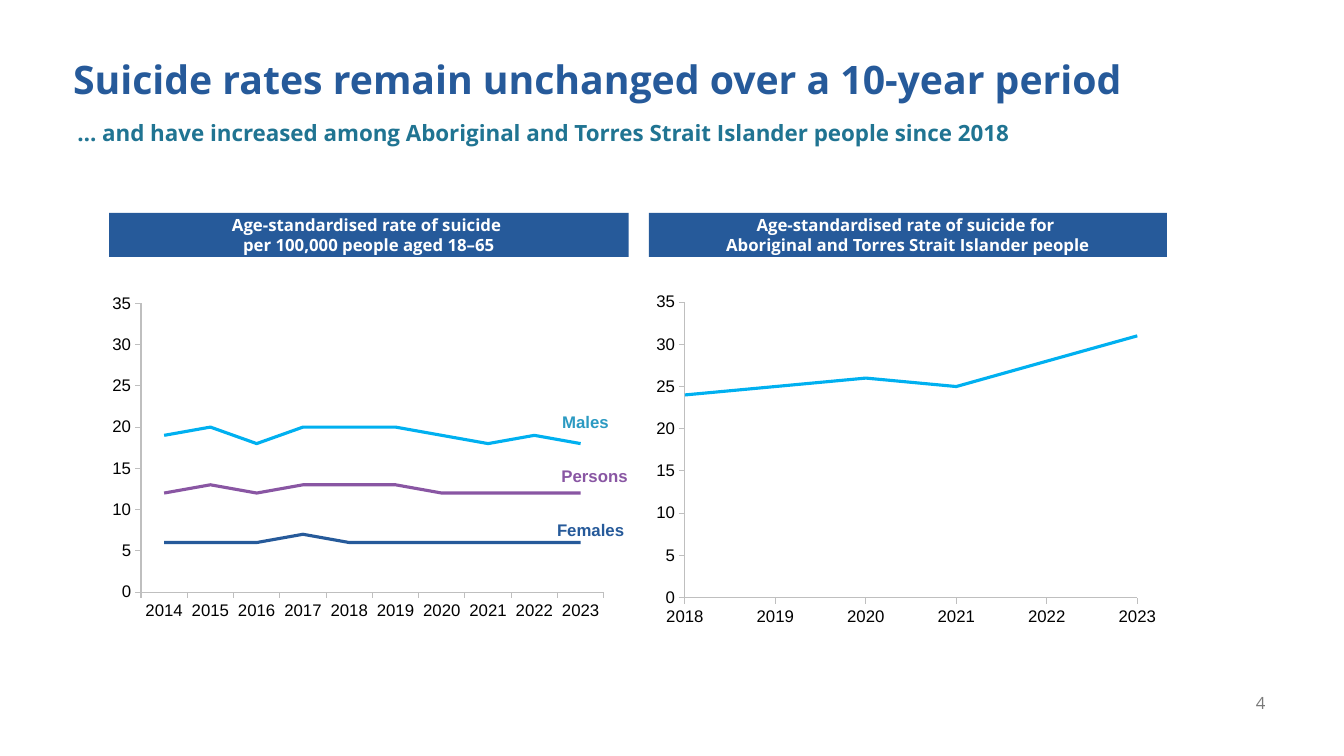
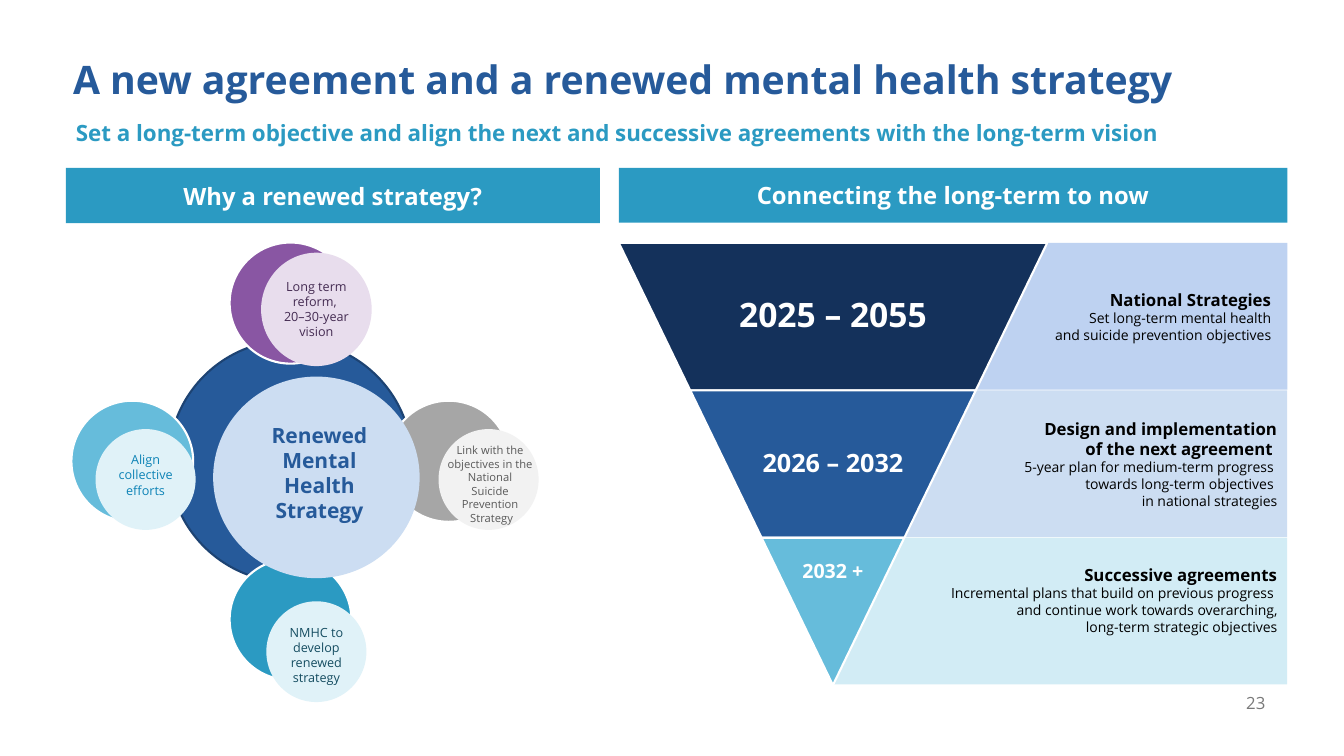
from dataclasses import dataclass

from pptx import Presentation
from pptx.chart.data import CategoryChartData, XyChartData
from pptx.dml.color import RGBColor
from pptx.enum.chart import XL_CHART_TYPE, XL_TICK_MARK
from pptx.enum.shapes import MSO_SHAPE
from pptx.enum.text import MSO_ANCHOR, MSO_AUTO_SIZE, PP_ALIGN
from pptx.oxml import parse_xml
from pptx.oxml.ns import nsdecls
from pptx.util import Pt


@dataclass(frozen=True)
class Theme:
    font: str = "Open Sans"
    chart_font: str = "Arial"
    blue: str = "265A9A"
    navy: str = "14315B"
    rim: str = "1D4373"
    teal: str = "2B9AC2"
    deep_teal: str = "207492"
    sky: str = "66BCDB"
    cyan: str = "00B0F0"
    purple: str = "8956A3"
    grey: str = "A6A6A6"
    axis: str = "BFBFBF"
    number: str = "797979"
    pale_blue: str = "CCDDF2"
    pale_sky: str = "E0F2F8"
    white: str = "FFFFFF"
    black: str = "000000"
    title: int = 28
    subtitle: int = 16
    banner: int = 17
    label: int = 12
    detail: int = 10
    small: int = 9
    tiny: int = 8


T = Theme()
INSETS = (7.2, 3.6, 7.2, 3.6)

# Slide 4: suicide rates
RATES = {
    "number": "4",
    "title": "Suicide rates remain unchanged over a 10-year period",
    "subtitle": "… and have increased among Aboriginal and Torres Strait Islander people since 2018",
}
RATE_HEADINGS = [
    (78, 371, ["Age-standardised rate of suicide ", "per 100,000 people aged 18–65"]),
    (463.5, 370, ["Age-standardised rate of suicide for ",
                  "Aboriginal and Torres Strait Islander people"]),
]
YEARS = [str(year) for year in range(2014, 2024)]
RATE_SERIES = [
    ("Males", T.cyan, [19, 20, 18, 20, 20, 20, 19, 18, 19, 18]),
    ("Females", T.blue, [6, 6, 6, 7, 6, 6, 6, 6, 6, 6]),
    ("Persons", T.purple, [12, 13, 12, 13, 13, 13, 12, 12, 12, 12]),
]
# name, colour, right edge, top
SERIES_LABELS = [("Males", T.teal, 442, 290.5), ("Persons", T.purple, 455.5, 329),
                 ("Females", T.blue, 453, 367.5)]
INDIGENOUS_RATES = [(2023, 31), (2022, 28), (2021, 25),
                    (2020, 26), (2019, 25), (2018, 24)]

# Slide 23: renewed strategy
STRATEGY = {
    "number": "23",
    "title": "A new agreement and a renewed mental health strategy",
    "subtitle": "Set a long-term objective and align the next and successive agreements "
                "with the long-term vision",
}
STRATEGY_HEADINGS = [(47, 381.5, 39.5, "Why a renewed strategy?"),
                     (442, 477.5, 39, "Connecting the long-term to now")]
HUB = "Renewed Mental Health Strategy"
# direction from hub, back colour, front colour, text colour, front offset, front size,
# type size, insets, anchor, wrap, lines
SATELLITES = [
    ((0, -1), T.purple, "E8DDED", "442B52", (18.5, 4.5), (79, 81), T.small,
     (0, 3, 0, 3.6), MSO_ANCHOR.MIDDLE, True, ["Long term reform, ", "20–30-year vision"]),
    ((1, 0), T.grey, "F2F2F2", "595959", (28.5, 13), (71.5, 72), T.tiny,
     (11.5, 0, 7.2, 3.6), MSO_ANCHOR.TOP, False,
     ["Link with the ", "objectives in the ", "National ", "Suicide ", "Prevention ",
      "Strategy"]),
    ((0, 1), T.teal, T.pale_sky, "154D61", (18.5, 23), (71.5, 72), T.small,
     (3, 6, 3, 3.6), MSO_ANCHOR.TOP, True, ["NMHC to develop renewed strategy"]),
    ((-1, 0), T.sky, T.pale_sky, "0D83B6", (9.5, 13), (71.5, 72), T.small,
     (3, 6, 3, 3.6), MSO_ANCHOR.TOP, True, ["Align collective efforts"]),
]
# period, type size, tier colour, panel colour, panel insets, headings, details
TIERS = [
    ("2025 – 2055", 24, T.navy, "BED2F1", (7.2, 3.6, 11.5, 3.6),
     ["National Strategies"],
     ["Set long-term mental health", "and suicide prevention objectives"]),
    ("2026 – 2032", 18, T.blue, T.pale_blue, INSETS,
     ["Design and implementation", "of the next agreement "],
     ["5-year plan for medium-term progress ", "towards long-term objectives ",
      "in national strategies"]),
    ("2032 +", 14, T.sky, "D2ECF5", (7.2, 3.6, 7.2, 19.5),
     ["Successive agreements"],
     ["Incremental plans that build on previous progress ",
      "and continue work towards overarching,", "long-term strategic objectives"]),
]


def rgb(value):
    return RGBColor.from_string(value)


def style_font(font, size, color, bold=False, name=T.font):
    font.name, font.size, font.bold = name, Pt(size), bold
    font.color.rgb = rgb(color)


def write(frame, lines, size, color, bold=False, align=PP_ALIGN.CENTER,
          anchor=MSO_ANCHOR.MIDDLE, insets=INSETS, wrap=True, font=T.font, spacing=None):
    """Fill a frame, one paragraph a line."""
    frame.text = "\n".join(lines)
    frame.word_wrap = wrap
    frame.auto_size = MSO_AUTO_SIZE.NONE
    frame.vertical_anchor = anchor
    (frame.margin_left, frame.margin_top,
     frame.margin_right, frame.margin_bottom) = map(Pt, insets)
    for paragraph in frame.paragraphs:
        paragraph.alignment = align
        paragraph.space_before = Pt(0)
        if spacing:
            paragraph.line_spacing = spacing
        for run in paragraph.runs:
            style_font(run.font, size, color, bold, font)


def paint(shape, fill, line=None):
    shape.shadow.inherit = False
    shape.fill.solid()
    shape.fill.fore_color.rgb = rgb(fill)
    if line:
        shape.line.color.rgb = rgb(line)
        shape.line.width = Pt(1.5)
    else:
        shape.line.fill.background()
    return shape


def add_box(slide, left, top, width, height, fill):
    return paint(slide.shapes.add_shape(
        MSO_SHAPE.RECTANGLE, Pt(left), Pt(top), Pt(width), Pt(height)), fill)


def add_circle(slide, center, size, fill, line=None):
    (x, y), (width, height) = center, size
    return paint(slide.shapes.add_shape(
        MSO_SHAPE.OVAL, Pt(x - width / 2), Pt(y - height / 2), Pt(width), Pt(height)),
        fill, line)


def place(shape, left, top, width, height):
    shape.left, shape.top, shape.width, shape.height = map(Pt, (left, top, width, height))


def add_text(slide, box, *args, **options):
    write(slide.shapes.add_textbox(*map(Pt, box)).text_frame, *args, **options)


def start_slide(deck, content, subtitle_left, subtitle_color):
    """Add a slide with its title, subtitle and page number."""
    slide = deck.slides.add_slide(deck.slide_layouts[0])
    title, subtitle = slide.placeholders
    place(title, 45, 40, 872.5, 40)
    place(subtitle, subtitle_left, 83.5, 872.5, 31.5)
    for holder, key, size, color in ((title, "title", T.title, T.blue),
                                     (subtitle, "subtitle", T.subtitle, subtitle_color)):
        write(holder.text_frame, [content[key]], size, color, bold=True,
              align=PP_ALIGN.LEFT, anchor=MSO_ANCHOR.TOP, spacing=0.9)
    add_text(slide, (856, 487.5, 55, 29), [content["number"]], T.label, T.number,
             align=PP_ALIGN.RIGHT)
    return slide


def add_rate_chart(slide, kind, data, top, left, plot, colors):
    """Add a line chart; plot gives the inner plot area as fractions x, y, w, h."""
    chart = slide.shapes.add_chart(kind, Pt(left), Pt(top), Pt(371.5), Pt(245.5), data).chart
    chart.has_legend = chart.has_title = False
    style_font(chart.font, T.small, T.black, name=T.chart_font)
    for axis in (chart.category_axis, chart.value_axis):
        axis.has_major_gridlines = False
        axis.major_tick_mark = XL_TICK_MARK.OUTSIDE
        axis.minor_tick_mark = XL_TICK_MARK.NONE
        axis.format.line.color.rgb = rgb(T.axis)
        axis.format.line.width = Pt(0.75)
        style_font(axis.tick_labels.font, T.label, T.black, name=T.chart_font)
    rates = chart.value_axis
    rates.minimum_scale, rates.maximum_scale, rates.major_unit = 0, 35, 5
    rates.tick_labels.number_format = "#,##0"
    rates.tick_labels.number_format_is_linked = False
    chart.plots[0].vary_by_categories = False
    for series, color in zip(chart.plots[0].series, colors):
        series.smooth = False
        series.format.line.color.rgb = rgb(color)
        series.format.line.width = Pt(2.25)
    sizes = "".join(f'<c:{tag} val="{value}"/>' for tag, value in zip("xywh", plot))
    layout = parse_xml(
        f'<c:layout {nsdecls("c")}><c:manualLayout><c:layoutTarget val="inner"/>'
        f'<c:xMode val="edge"/><c:yMode val="edge"/>{sizes}</c:manualLayout></c:layout>')
    area = chart.plots[0]._element.getparent()
    for old in area.findall(layout.tag):
        area.remove(old)
    area.insert(0, layout)
    return chart


def build_rates(deck):
    slide = start_slide(deck, RATES, 48, T.deep_teal)
    for left, width, lines in RATE_HEADINGS:
        heading = add_box(slide, left, 152, width, 31.5, T.blue)
        write(heading.text_frame, lines, T.label, T.white, bold=True)

    people = CategoryChartData()
    people.categories = YEARS
    for name, _, values in RATE_SERIES:
        people.add_series(name, values)
    add_rate_chart(slide, XL_CHART_TYPE.LINE, people, 202, 71,
                   (0.08, 0.06, 0.89, 0.84), [color for _, color, _ in RATE_SERIES])
    for name, color, right, top in SERIES_LABELS:
        add_text(slide, (right - 86, top, 86, 22), [name], T.label, color, bold=True,
                 align=PP_ALIGN.RIGHT, anchor=MSO_ANCHOR.TOP, font=T.chart_font)

    indigenous = XyChartData()
    rate = indigenous.add_series("Aboriginal and Torres Strait Islander people")
    for year, value in INDIGENOUS_RATES:
        rate.add_data_point(year, value)
    chart = add_rate_chart(slide, XL_CHART_TYPE.XY_SCATTER_LINES_NO_MARKERS, indigenous,
                           206, 459.5, (0.08, 0.04, 0.87, 0.86), [T.cyan])
    years = chart.category_axis
    years.minimum_scale, years.maximum_scale, years.major_unit = 2018, 2023, 1
    years.tick_labels.number_format = "0"
    years.tick_labels.number_format_is_linked = False


def build_hub(slide, center=(207.5, 329.5), reach=113):
    x, y = center
    add_circle(slide, center, (174, 173), T.blue, T.rim)
    spots = [(x + reach * dx, y + reach * dy) for (dx, dy), *_ in SATELLITES]
    for spot, (_, back, *_) in zip(spots, SATELLITES):
        add_circle(slide, spot, (87, 86.5), back, T.white)
    hub = add_circle(slide, (x + 18.5, y + 11.5), (147.5, 144), T.pale_blue)
    write(hub.text_frame, [HUB], 15, T.blue, bold=True, anchor=MSO_ANCHOR.TOP,
          insets=(11.5, 11.5, 7.2, 3.6))
    for spot, (_, _, front, color, offset, size, type_size,
               insets, anchor, wrap, lines) in zip(spots, SATELLITES):
        circle = add_circle(slide, (spot[0] + offset[0], spot[1] + offset[1]), size, front)
        write(circle.text_frame, lines, type_size, color, anchor=anchor,
              insets=insets, wrap=wrap)


def build_funnel(slide, left=442, top=173.5, width=306, band=105.3, panel_right=919.5):
    step = width / 2 / len(TIERS)
    tops = [top + band * i for i in range(len(TIERS))]
    # Each panel reaches under the slanted edge, down to its tier's lower corner.
    for i, (_, _, _, fill, insets, headings, details) in enumerate(TIERS):
        corner = left + width - step * (i + 1)
        panel = add_box(slide, corner, tops[i], panel_right - corner, band - 0.5, fill)
        write(panel.text_frame, headings + details, T.detail, T.black,
              align=PP_ALIGN.RIGHT, insets=insets)
        for paragraph in panel.text_frame.paragraphs[:len(headings)]:
            style_font(paragraph.runs[0].font, T.label, T.black, bold=True)
    for i, (period, size, fill, *_) in enumerate(TIERS):
        near, far = left + step * i, left + width - step * i
        bottom = tops[i] + band
        outline = slide.shapes.build_freeform(Pt(far), Pt(tops[i]), scale=1.0)
        outline.add_line_segments([(Pt(far - step), Pt(bottom)), (Pt(near + step), Pt(bottom)),
                                   (Pt(near), Pt(tops[i]))], close=True)
        tier = paint(outline.convert_to_shape(), fill, T.white)
        last = i == len(TIERS) - 1
        write(tier.text_frame, [period], size, T.white, bold=True, spacing=0.9,
              anchor=MSO_ANCHOR.TOP if last else MSO_ANCHOR.MIDDLE,
              insets=(3, 17 if last else 3, 3, 3))


def build_strategy(deck):
    slide = start_slide(deck, STRATEGY, 47, T.teal)
    build_hub(slide)
    build_funnel(slide)
    for left, width, height, heading in STRATEGY_HEADINGS:
        banner = add_box(slide, left, 120, width, height, T.teal)
        write(banner.text_frame, [heading], T.banner, T.white, bold=True)


def main():
    deck = Presentation()
    deck.slide_width, deck.slide_height = Pt(960), Pt(540)
    build_rates(deck)
    build_strategy(deck)
    deck.save("out.pptx")


if __name__ == "__main__":
    main()
